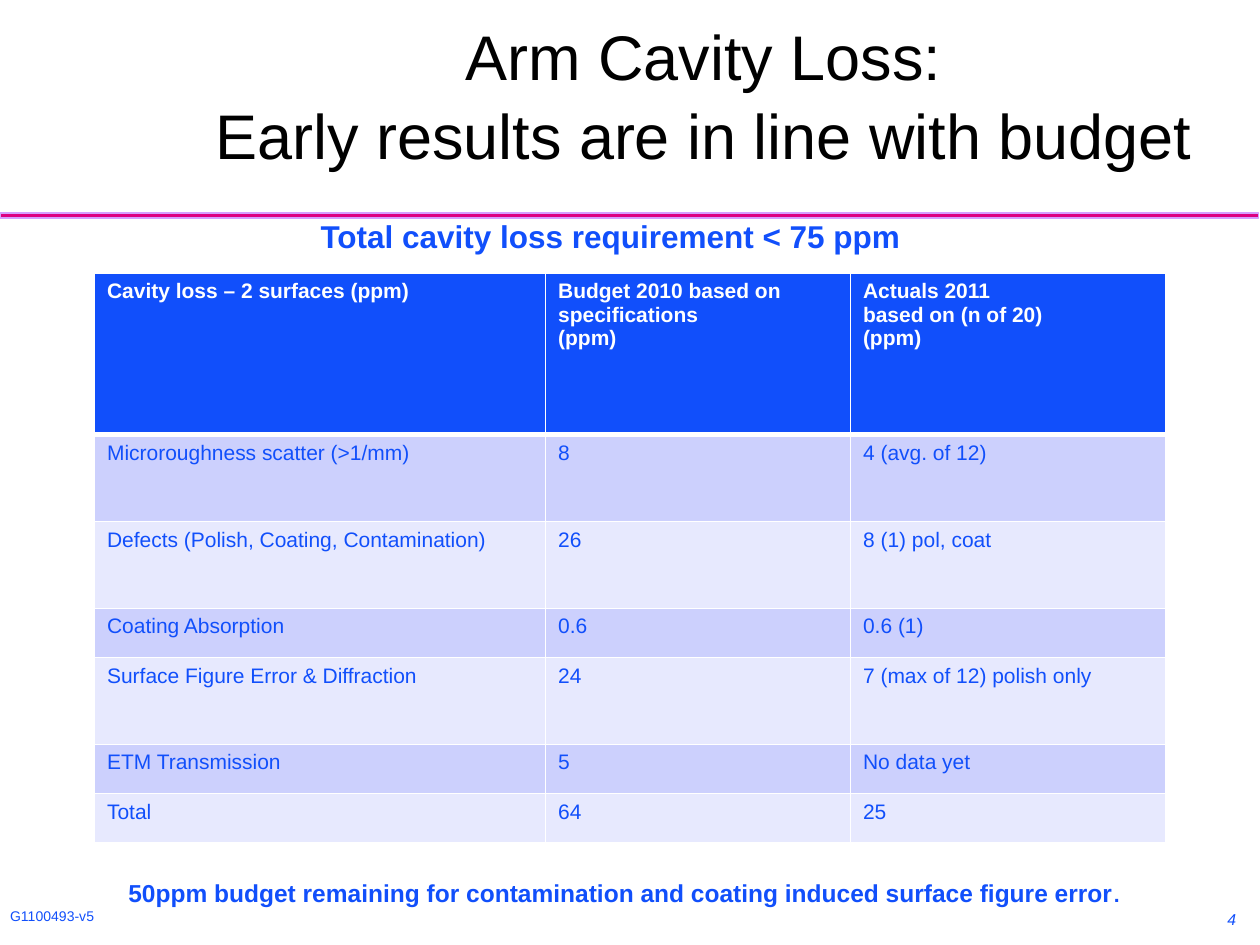
from lxml.etree import SubElement
from pptx import Presentation
from pptx.dml.color import RGBColor
from pptx.enum.shapes import MSO_SHAPE
from pptx.enum.text import MSO_ANCHOR, PP_ALIGN
from pptx.oxml.ns import qn
from pptx.util import Inches, Pt

BLUE = RGBColor(0x11, 0x4F, 0xFB)
BAND_DARK = RGBColor(0xCC, 0xD0, 0xFD)
BAND_LIGHT = RGBColor(0xE7, 0xE9, 0xFE)
MAGENTA = RGBColor(0xDC, 0x00, 0x81)
LILAC = RGBColor(0xD4, 0x9F, 0xFF)
WHITE = RGBColor(0xFF, 0xFF, 0xFF)
BLACK = RGBColor(0x00, 0x00, 0x00)

COLUMN_WIDTHS = [3.58, 2.42, 2.5]
ROW_HEIGHTS = [1.28, 0.69, 0.69, 0.39, 0.69, 0.39, 0.39]
LOSSES = [
    ["Cavity loss – 2 surfaces (ppm)", "Budget 2010 based on specifications\v(ppm)",
     "Actuals 2011\vbased on (n of 20)\v(ppm)"],
    ["Microroughness scatter (>1/mm)", "8", "4 (avg. of 12)"],
    ["Defects (Polish, Coating, Contamination)", "26", "8 (1) pol, coat"],
    ["Coating Absorption", "0.6", "0.6 (1)"],
    ["Surface Figure Error & Diffraction", "24", "7 (max of 12) polish only"],
    ["ETM Transmission", "5", "No data yet"],
    ["Total", "64", "25"],
]


class SlideBuilder:
    font_name = "Arial"

    def __init__(self, slide):
        self.slide = slide

    def style(self, span, size, color=BLUE, bold=False, italic=False):
        font = span.font
        font.name, font.size = self.font_name, Pt(size)
        font.bold, font.italic = bold, italic
        font.color.rgb = color

    def place(self, shape, left, top, width, height):
        shape.left, shape.top = Inches(left), Inches(top)
        shape.width, shape.height = Inches(width), Inches(height)

    def title(self, text, *bounds):
        title = self.slide.shapes.title
        self.place(title, *bounds)
        frame = title.text_frame
        frame.vertical_anchor = MSO_ANCHOR.BOTTOM
        frame.word_wrap = True
        para = frame.paragraphs[0]
        para.text = text
        para.alignment = PP_ALIGN.CENTER
        para.line_spacing = 1.05
        for span in para.runs:
            self.style(span, 36, BLACK)

    def rule(self, *bounds):
        bar = self.slide.shapes.add_shape(MSO_SHAPE.RECTANGLE, *map(Inches, bounds))
        bar.shadow.inherit = False
        bar.fill.solid()
        bar.fill.fore_color.rgb = MAGENTA
        bar.line.color.rgb = LILAC
        bar.line.width = Pt(0.75)

    def text(self, text, bounds, size, align=PP_ALIGN.LEFT, anchor=MSO_ANCHOR.TOP,
             wrap=False, inset=True, bold=False, italic=False):
        box = self.slide.shapes.add_textbox(*map(Inches, bounds))
        frame = box.text_frame
        frame.word_wrap = wrap
        frame.vertical_anchor = anchor
        if not inset:
            frame.margin_left = frame.margin_right = 0
            frame.margin_top = frame.margin_bottom = 0
        para = frame.paragraphs[0]
        para.text = text
        para.alignment = align
        self.style(para.runs[0], size, bold=bold, italic=italic)
        return para

    def borders(self, cell, bottom):
        properties = cell._tc.get_or_add_tcPr()
        for index, (side, width) in enumerate(
                [("L", 1), ("R", 1), ("T", 1), ("B", bottom)]):
            line = properties.makeelement(qn(f"a:ln{side}"), {"w": str(Pt(width))})
            fill = SubElement(line, qn("a:solidFill"))
            SubElement(fill, qn("a:srgbClr"), val=str(WHITE))
            properties.insert(index, line)

    def table(self, rows, widths, heights, left, top):
        table = self.slide.shapes.add_table(
            len(rows), len(widths), Inches(left), Inches(top),
            Inches(sum(widths)), Inches(sum(heights))).table
        for column, width in zip(table.columns, widths):
            column.width = Inches(width)
        for row, height in zip(table.rows, heights):
            row.height = Inches(height)
        for row_index, texts in enumerate(rows):
            header = row_index == 0
            band = BAND_DARK if row_index % 2 else BAND_LIGHT
            for column_index, text in enumerate(texts):
                cell = table.cell(row_index, column_index)
                cell.fill.solid()
                cell.fill.fore_color.rgb = BLUE if header else band
                self.borders(cell, 3 if header or row_index == 0 else 1)
                para = cell.text_frame.paragraphs[0]
                para.text = text
                para.alignment = PP_ALIGN.LEFT
                for span in para.runs:
                    self.style(span, 12, WHITE if header else BLUE, bold=header)


def main():
    deck = Presentation()
    deck.slide_width, deck.slide_height = Inches(10), Inches(7.5)
    builder = SlideBuilder(deck.slides.add_slide(deck.slide_layouts[5]))
    builder.rule(0, 1.69, 9.99, 0.04)
    builder.text("G1100493-v5", (0.08, 7.17, 0.67, 0.2), 8, inset=False,
                 anchor=MSO_ANCHOR.MIDDLE)
    builder.title("Arm Cavity Loss:\vEarly results are in line with budget",
                  1.42, 0.17, 8.33, 1.25)
    builder.table(LOSSES, COLUMN_WIDTHS, ROW_HEIGHTS, 0.75, 2.17)
    builder.text("4", (7.83, 6.92, 2.08, 0.5), 9, align=PP_ALIGN.RIGHT,
                 anchor=MSO_ANCHOR.BOTTOM, italic=True)
    remark = builder.text(
        "50ppm budget remaining for contamination and coating induced surface figure error",
        (0.92, 6.92, 8.33, 0.34), 14, wrap=True, bold=True)
    period = remark.add_run()
    period.text = "."
    builder.style(period, 12, bold=True)
    builder.text("Total cavity loss requirement < 75 ppm", (2.42, 1.67, 4.85, 0.4), 18,
                 align=PP_ALIGN.CENTER, bold=True)
    deck.save("out.pptx")


if __name__ == "__main__":
    main()
